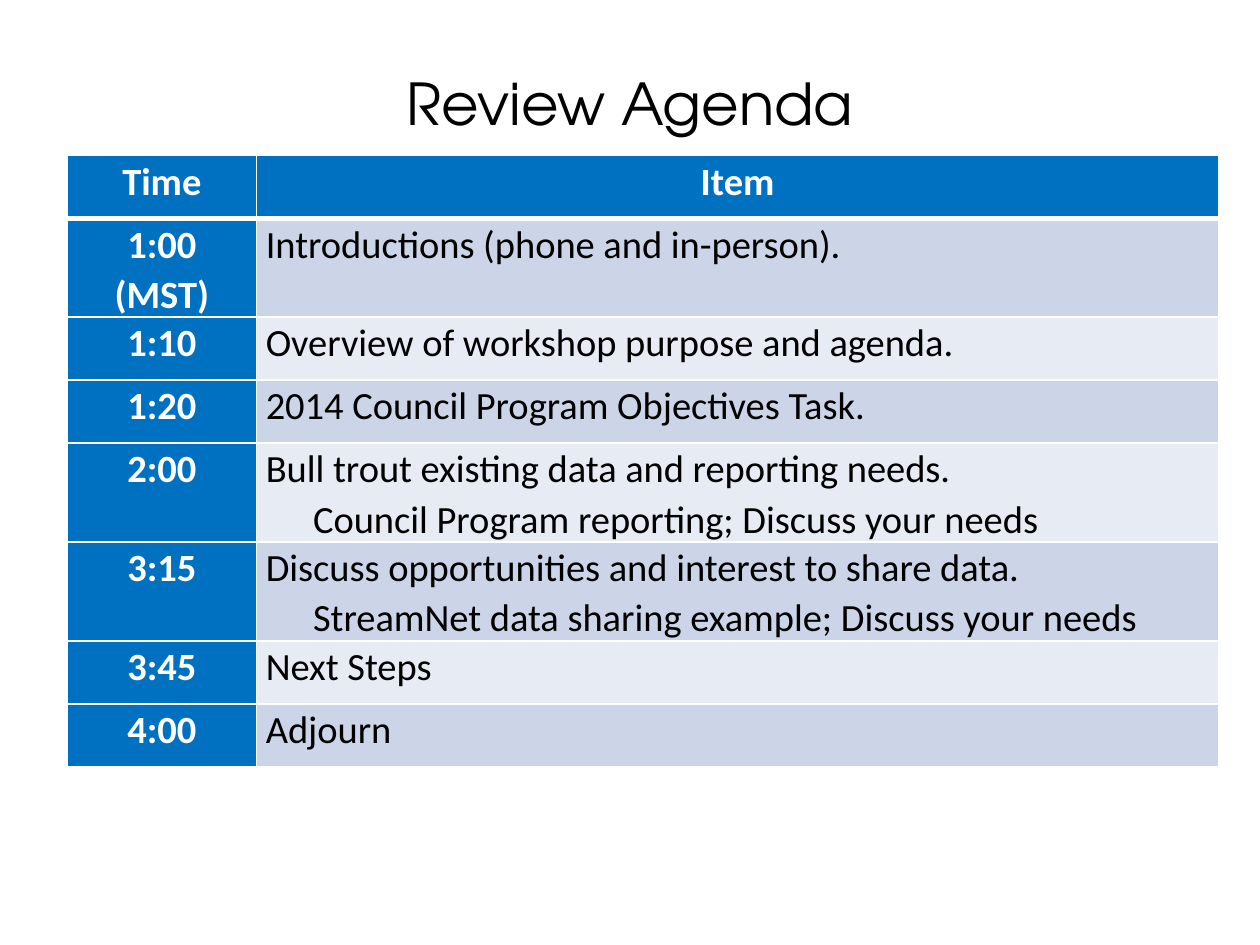
from lxml.etree import SubElement
from pptx import Presentation
from pptx.dml.color import RGBColor
from pptx.enum.text import MSO_ANCHOR as Anchor, PP_ALIGN as Align
from pptx.oxml.ns import qn
from pptx.util import Pt

TITLE = "Review Agenda"
HEADINGS = ("Time", ["Item"])
AGENDA = [
    ("1:00 (MST)", ["Introductions (phone and in-person)."]),
    ("1:10", ["Overview of workshop purpose and agenda."]),
    ("1:20", ["2014 Council Program Objectives Task."]),
    ("2:00", ["Bull trout existing data and reporting needs.",
              "Council Program reporting; Discuss your needs"]),
    ("3:15", ["Discuss opportunities and interest to share data.",
              "StreamNet data sharing example; Discuss your needs"]),
    ("3:45", ["Next Steps"]),
    ("4:00", ["Adjourn"]),
]
THEME = {
    "title_font": "TeX Gyre Adventor", "title_size": 33,
    "body_font": "Calibri", "body_size": 22,
    "ink": "000000", "white": "FFFFFF", "blue": "0070C0",
    "bands": ("CCD5E8", "E7EBF4"),
}
COLUMN_WIDTHS = (108, 550)
ROW_HEIGHT = 36
SIDE_MARGIN = 5.4
SUBITEM_INDENT = 27


def add_text(paragraph, text, font, size, color, bold=False):
    run = paragraph.add_run()
    run.text = text
    run.font.name = font
    run.font.size = Pt(size)
    run.font.bold = bold
    run.font.color.rgb = RGBColor.from_string(color)


def add_borders(cell, top, bottom):
    properties = cell._tc.get_or_add_tcPr()
    for side, width in (("L", 1), ("R", 1), ("T", top), ("B", bottom)):
        border = SubElement(properties, qn(f"a:ln{side}"), w=str(Pt(width)))
        fill = SubElement(border, qn("a:solidFill"))
        SubElement(fill, qn("a:srgbClr"), val=THEME["white"])


def fill_cell(cell, lines, row, accent, centered):
    cell.margin_left = cell.margin_right = Pt(SIDE_MARGIN)
    cell.margin_top = cell.margin_bottom = 0
    add_borders(cell, top=3 if row == 1 else 1, bottom=3 if row == 0 else 1)
    cell.fill.solid()
    background = THEME["blue"] if accent else THEME["bands"][(row - 1) % 2]
    cell.fill.fore_color.rgb = RGBColor.from_string(background)
    for level, line in enumerate(lines):
        paragraph = cell.text_frame.add_paragraph() if level else cell.text_frame.paragraphs[0]
        paragraph.line_spacing = 1.07
        paragraph.alignment = Align.CENTER if centered else Align.LEFT
        if level:
            paragraph.level = level
            paragraph._p.get_or_add_pPr().set("marL", str(Pt(SUBITEM_INDENT)))
        add_text(paragraph, line, THEME["body_font"], THEME["body_size"],
                 THEME["white" if accent else "ink"], bold=accent)


def add_title(slide):
    heading = slide.shapes.add_textbox(Pt(49.7), Pt(28.8), Pt(620.6), Pt(59.8)).text_frame
    heading.word_wrap = True
    heading.vertical_anchor = Anchor.MIDDLE
    paragraph = heading.paragraphs[0]
    paragraph.alignment = Align.CENTER
    add_text(paragraph, TITLE, THEME["title_font"], THEME["title_size"], THEME["ink"])


def add_agenda(slide):
    rows = [HEADINGS, *AGENDA]
    agenda = slide.shapes.add_table(
        len(rows), len(COLUMN_WIDTHS), Pt(38.5), Pt(88.7),
        Pt(sum(COLUMN_WIDTHS)), Pt(ROW_HEIGHT * len(rows))).table
    for column, width in zip(agenda.columns, COLUMN_WIDTHS):
        column.width = Pt(width)
    for row, (time, items) in enumerate(rows):
        agenda.rows[row].height = Pt(ROW_HEIGHT)
        fill_cell(agenda.cell(row, 0), [time], row, accent=True, centered=True)
        fill_cell(agenda.cell(row, 1), items, row, accent=row == 0, centered=row == 0)


def main():
    deck = Presentation()
    deck.slide_width, deck.slide_height = Pt(720), Pt(540)
    slide = deck.slides.add_slide(deck.slide_layouts[6])
    add_title(slide)
    add_agenda(slide)
    deck.save("out.pptx")


if __name__ == "__main__":
    main()
